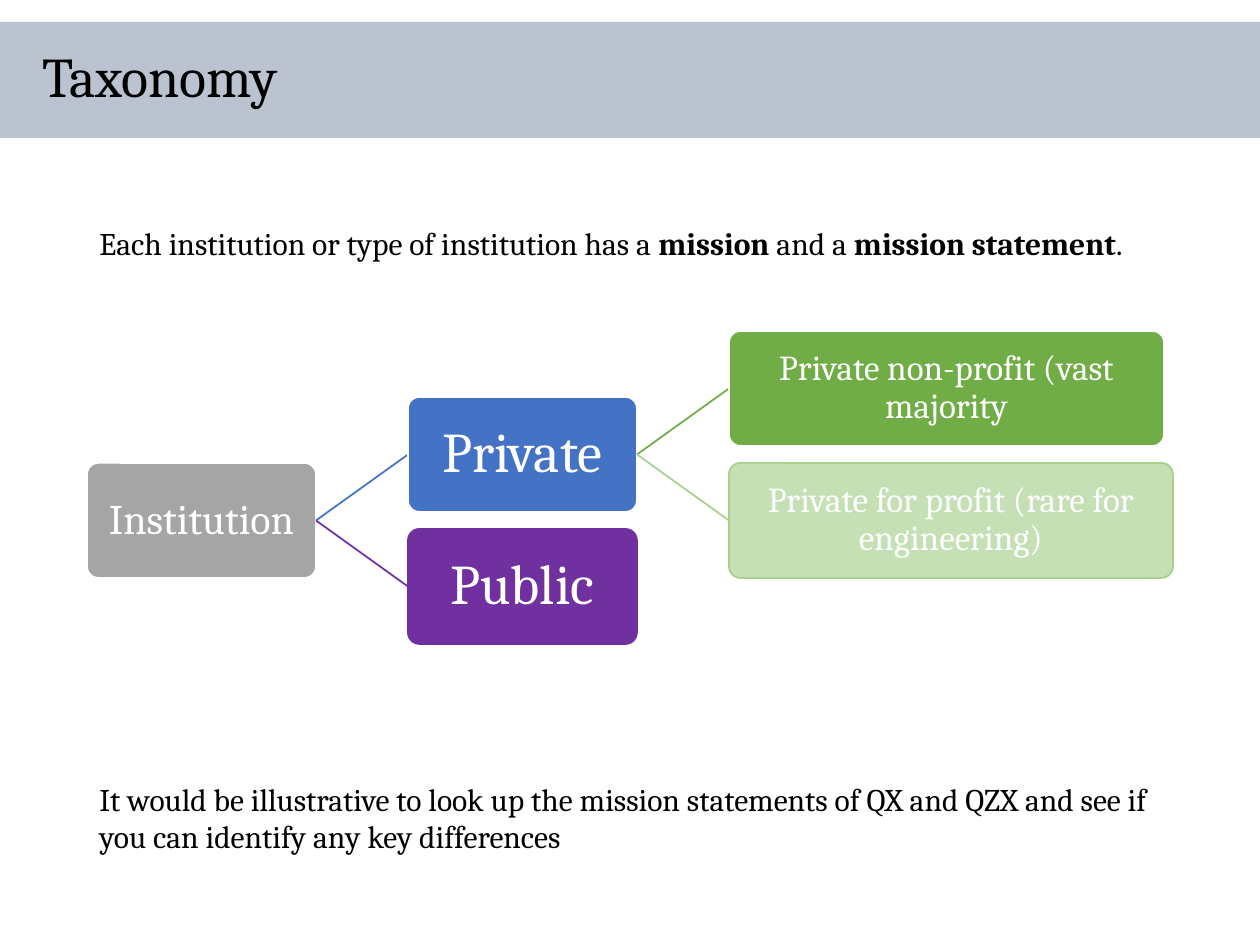
import pptx
import pptx.util
import pptx.dml.color
import pptx.enum.shapes
import pptx.enum.text
import pptx.oxml.ns
import lxml.etree

RGBColor = pptx.dml.color.RGBColor
PX = 914400 / 126
FONT = "Cambria"
BLACK = RGBColor(0, 0, 0)
WHITE = RGBColor(255, 255, 255)
NAVY = RGBColor(0x20, 0x38, 0x64)
GRAY = RGBColor(0xA5, 0xA5, 0xA5)
BLUE = RGBColor(0x44, 0x72, 0xC4)
PURPLE = RGBColor(0x70, 0x30, 0xA0)
GREEN = RGBColor(0x70, 0xAD, 0x47)
LIGHT_GREEN = RGBColor(0xA9, 0xD1, 0x8E)
PALE_GREEN = RGBColor(0xC5, 0xE0, 0xB4)

LEFT = 87
TOP = 331
COLUMN_STEP = 321
HALF_ROW = 66
BOX_HEIGHT = 115


def px(*lengths):
    return [pptx.util.Emu(round(length * PX)) for length in lengths]


def write_runs(paragraph, runs, size, color):
    for text, bold in runs:
        run = paragraph.add_run()
        run.text = text
        run.font.name = FONT
        run.font.size = pptx.util.Pt(size)
        run.font.bold = bold
        run.font.color.rgb = color


def add_banner(slide):
    banner = slide.shapes.add_shape(
        pptx.enum.shapes.MSO_SHAPE.RECTANGLE, *px(0, 22, 1260, 116))
    banner.shadow.inherit = False
    banner.fill.solid()
    banner.fill.fore_color.rgb = NAVY
    banner.line.fill.background()
    color = banner.fill._xPr.find(".//" + pptx.oxml.ns.qn("a:srgbClr"))
    lxml.etree.SubElement(color, pptx.oxml.ns.qn("a:alpha"), val="30000")


def add_text(slide, bounds, runs, size, line_spacing=1.0):
    box = slide.shapes.add_textbox(*px(*bounds))
    frame = box.text_frame
    frame.word_wrap = True
    frame.vertical_anchor = pptx.enum.text.MSO_ANCHOR.MIDDLE
    paragraph = frame.paragraphs[0]
    paragraph.line_spacing = line_spacing
    write_runs(paragraph, runs, size, BLACK)


def add_box(slide, column, row, width, text, size, fill, line=WHITE):
    box = slide.shapes.add_shape(
        pptx.enum.shapes.MSO_SHAPE.ROUNDED_RECTANGLE,
        *px(LEFT + column * COLUMN_STEP, TOP + row * HALF_ROW, width, BOX_HEIGHT))
    box.adjustments[0] = 0.1
    box.shadow.inherit = False
    box.fill.solid()
    box.fill.fore_color.rgb = fill
    box.line.color.rgb = line
    box.line.width = pptx.util.Pt(1)
    frame = box.text_frame
    frame.word_wrap = True
    frame.vertical_anchor = pptx.enum.text.MSO_ANCHOR.MIDDLE
    inset, = px(5)
    frame.margin_left = frame.margin_right = inset
    frame.margin_top = frame.margin_bottom = inset
    paragraph = frame.paragraphs[0]
    paragraph.alignment = pptx.enum.text.PP_ALIGN.CENTER
    paragraph.line_spacing = 0.9
    write_runs(paragraph, [(text, False)], size, WHITE)
    return box


def add_branch(slide, parent, branch_color, *box_details):
    connector = slide.shapes.add_connector(
        pptx.enum.shapes.MSO_CONNECTOR.STRAIGHT, 0, 0, 0, 0)
    connector.line.color.rgb = branch_color
    connector.line.width = pptx.util.Pt(1)
    lxml.etree.SubElement(
        connector._element.spPr, pptx.oxml.ns.qn("a:effectLst"))
    child = add_box(slide, *box_details)
    connector.begin_connect(parent, 3)
    connector.end_connect(child, 1)
    return child


def add_taxonomy(slide):
    institution = add_box(slide, 0, 2, 229, "Institution", 24, GRAY)
    private = add_branch(slide, institution, BLUE,
                         1, 1, 229, "Private", 32, BLUE)
    add_branch(slide, private, GREEN,
               2, 0, 435, "Private non-profit (vast majority", 20, GREEN)
    add_branch(slide, private, LIGHT_GREEN,
               2, 2, 444, "Private for profit (rare for engineering)", 20,
               PALE_GREEN, LIGHT_GREEN)
    add_branch(slide, institution, PURPLE,
               1, 3, 229, "Public", 32, PURPLE, PURPLE)


def main():
    presentation = pptx.Presentation()
    presentation.slide_width, presentation.slide_height = px(1260, 945)
    slide = presentation.slides.add_slide(presentation.slide_layouts[6])
    add_banner(slide)
    add_text(slide, (30, 22, 1230, 114), [("Taxonomy", False)], 32, 0.9)
    add_taxonomy(slide)
    add_text(slide, (87, 217, 1086, 51), [
        ("Each institution or type of institution has a ", False),
        ("mission", True),
        (" and a ", False),
        ("mission statement", True),
        (".", False),
    ], 18)
    add_text(slide, (87, 773, 1086, 89), [
        ("It would be illustrative to look up the mission statements of QX "
         "and QZX and see if you can identify any key differences", False),
    ], 18)
    presentation.save("out.pptx")


if __name__ == "__main__":
    main()
